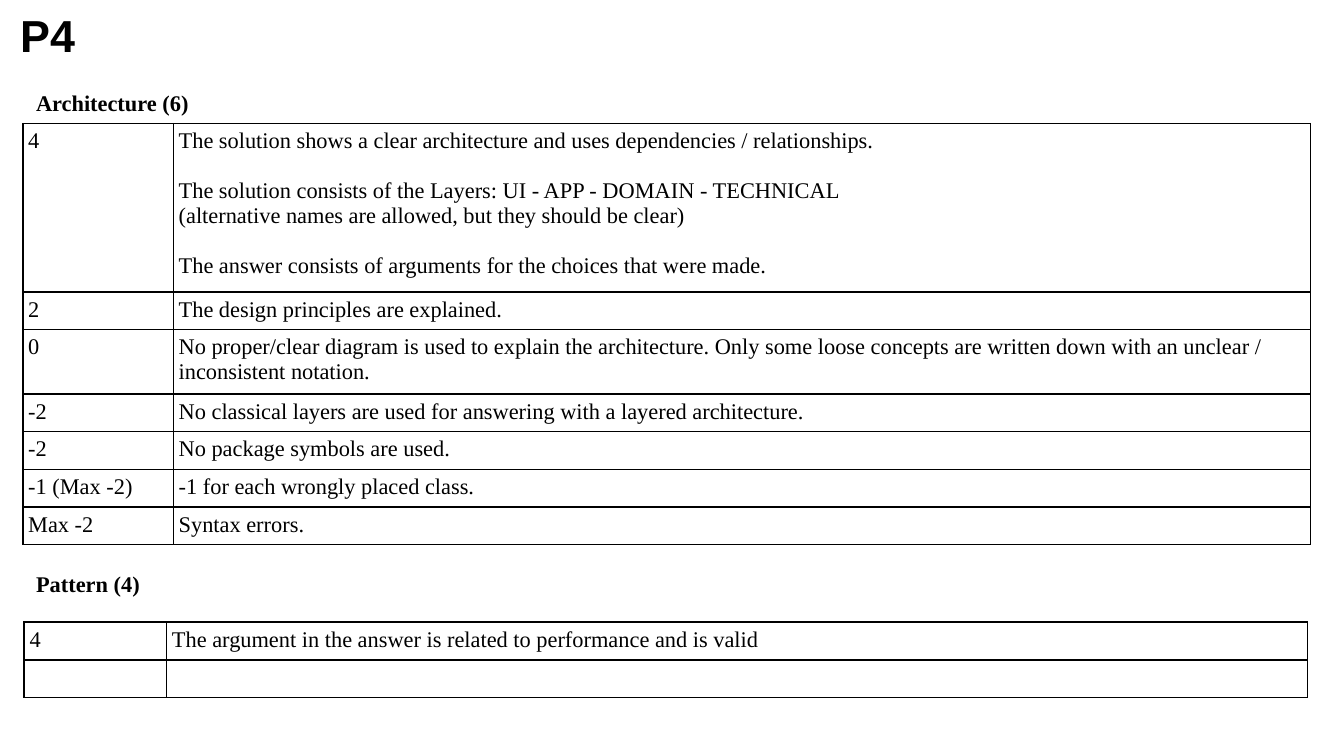
from lxml.etree import SubElement
from pptx import Presentation
from pptx.dml.color import RGBColor
from pptx.enum.text import MSO_ANCHOR as Anchor, MSO_AUTO_SIZE as AutoSize, PP_ALIGN as Align
from pptx.oxml import parse_xml
from pptx.oxml.ns import nsdecls, qn
from pptx.util import Inches, Pt

BLACK = RGBColor(0x00, 0x00, 0x00)
WHITE = RGBColor(0xFF, 0xFF, 0xFF)
SERIF = "Times New Roman"
TEXT_SIZE = 12
BLANK_LINE = 13.4
FRAME_SIDE = 3.28

ARCHITECTURE = [
    ("4", "The solution shows a clear architecture and uses dependencies / relationships.\n\n"
          "The solution consists of the Layers: UI - APP - DOMAIN - TECHNICAL\n"
          "(alternative names are allowed, but they should be clear)\n\n"
          "The answer consists of arguments for the choices that were made."),
    ("2", "The design principles are explained."),
    ("0", "No proper/clear diagram is used to explain the architecture. Only some loose concepts "
          "are written down with an unclear / inconsistent notation."),
    ("-2", "No classical layers are used for answering with a layered architecture."),
    ("-2", "No package symbols are used."),
    ("-1 (Max -2)", "-1 for each wrongly placed class."),
    ("Max -2", "Syntax errors."),
]
PATTERN = [
    ("4", "The argument in the answer is related to performance and is valid"),
    ("", ""),
]


def write(frame, text, size=TEXT_SIZE, font=SERIF, bold=False, inset=0.1):
    """Fill a text frame; a double line break becomes space before the next paragraph."""
    frame.word_wrap = True
    frame.margin_left = frame.margin_right = Inches(inset)
    frame.margin_top = frame.margin_bottom = Inches(inset)
    blocks = [block.split("\n") for block in text.split("\n\n")]
    block_starts = {sum(map(len, blocks[:index])) for index in range(1, len(blocks))}
    frame.text = text.replace("\n\n", "\n")
    for index, paragraph in enumerate(frame.paragraphs):
        paragraph.alignment = Align.LEFT
        paragraph.space_before = Pt(BLANK_LINE if index in block_starts else 0)
        for run in paragraph.runs:
            run.font.name = font
            run.font.size = Pt(size)
            run.font.bold = bold
            run.font.color.rgb = BLACK
        if not paragraph.runs:
            # An empty cell takes its line height from the paragraph end mark.
            SubElement(paragraph._p, qn("a:endParaRPr"), sz=str(size * 100))


def add_title(slide, text):
    title = slide.shapes.title
    title.left, title.top = Inches(0.05), Inches(0)
    title.width, title.height = Inches(2.78), Inches(0.51)
    write(title.text_frame, text, size=24, font="Arial", bold=True)
    title.text_frame.auto_size = AutoSize.NONE
    title.text_frame.vertical_anchor = Anchor.MIDDLE


def add_heading(slide, text, top, width, height):
    heading = slide.shapes.add_textbox(Inches(0.17), Inches(top), Inches(width), Inches(height))
    write(heading.text_frame, text, bold=True)
    heading.text_frame.vertical_anchor = Anchor.MIDDLE


def add_borders(cell):
    properties = cell._tc.get_or_add_tcPr()
    for position, side in enumerate(("lnL", "lnR", "lnT", "lnB")):
        line = parse_xml(
            f'<a:{side} {nsdecls("a")} w="{Pt(1)}"><a:solidFill>'
            f'<a:srgbClr val="{BLACK}"/></a:solidFill></a:{side}>')
        properties.insert(position, line)


def add_rubric(slide, criteria, left, top, widths, heights):
    """Add a bordered table of points and criteria; rows grow to fit their text."""
    frame = slide.shapes.add_table(
        len(criteria), len(widths), Inches(left), Inches(top),
        Inches(FRAME_SIDE), Inches(FRAME_SIDE))
    table = frame.table
    table.first_row = table.horz_banding = False
    for column, width in zip(table.columns, widths):
        column.width = Inches(width)
    for row, height, texts in zip(table.rows, heights, criteria):
        row.height = Inches(height)
        for cell, text in zip(row.cells, texts):
            write(cell.text_frame, text)
            cell.margin_left = cell.margin_right = Inches(0.04)
            cell.margin_top = cell.margin_bottom = Inches(0.04)
            cell.fill.solid()
            cell.fill.fore_color.rgb = WHITE
            add_borders(cell)
    frame.width = frame.height = Inches(FRAME_SIDE)


def main():
    presentation = Presentation()
    presentation.slide_width = Inches(10)
    presentation.slide_height = Inches(10) * 9 // 16
    slide = presentation.slides.add_slide(presentation.slide_layouts[5])

    add_title(slide, "P4")
    add_heading(slide, "Architecture (6)", 0.61, 2.67, 0.31)
    add_rubric(slide, ARCHITECTURE, 0.17, 0.92, (1.12, 8.46), [1.18] + [0] * 6)
    add_heading(slide, "Pattern (4)", 4.22, 3.28, 0.24)
    add_rubric(slide, PATTERN, 0.18, 4.63, (1.06, 8.49), [0.12] * 2)

    presentation.save("out.pptx")


if __name__ == "__main__":
    main()
